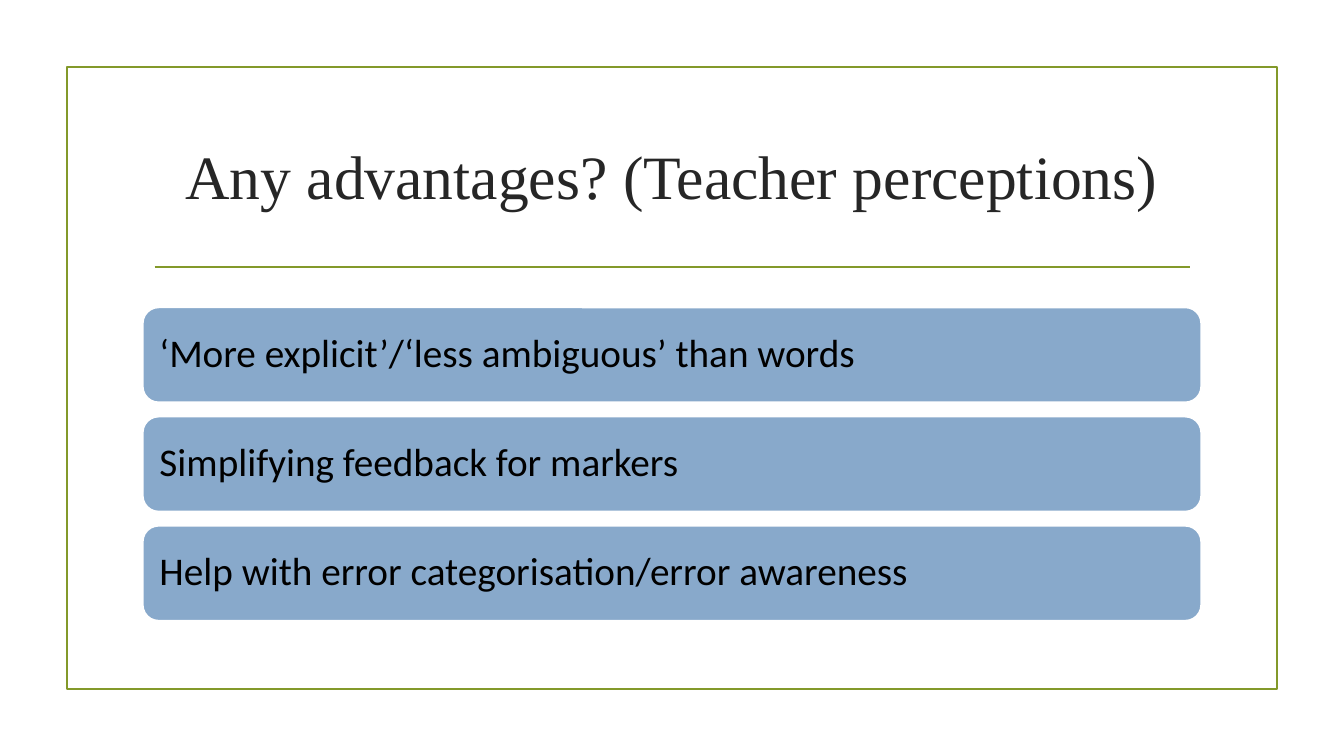
from dataclasses import dataclass

from lxml import etree
from pptx import Presentation
from pptx import util as u
from pptx.dml.color import RGBColor
from pptx.enum import shapes, text
from pptx.oxml.ns import qn

COLUMNS, ROWS = 160, 90


@dataclass(frozen=True)
class Theme:
    background: str = "FFFFFF"
    accent: str = "83992A"
    card: str = "88A9CB"
    title: str = "262626"
    body: str = "000000"
    title_font: str = "Times New Roman"
    body_font: str = "Calibri"
    title_size: int = 44
    body_size: int = 28
    line_width: float = 1.25


class SlideBuilder:
    """Draws on one slide; lengths are columns and rows of the grid."""

    def __init__(self, presentation, theme):
        self.theme = theme
        self.column = presentation.slide_width / COLUMNS
        self.row = presentation.slide_height / ROWS
        self.slide = presentation.slides.add_slide(presentation.slide_layouts[6])
        fill = self.slide.background.fill
        fill.solid()
        fill.fore_color.rgb = RGBColor.from_string(theme.background)

    def place(self, *lengths):
        """Turn alternating columns and rows into slide lengths."""
        steps = (self.column, self.row) * 2
        return [u.Emu(round(length * step)) for length, step in zip(lengths, steps)]

    def outline(self, line, color):
        line.color.rgb = RGBColor.from_string(color)
        line.width = u.Pt(self.theme.line_width)

    def set_words(self, shape, words, font, size, color, align, inset):
        frame = shape.text_frame
        frame.text = words
        frame.word_wrap = True
        frame.vertical_anchor = text.MSO_ANCHOR.MIDDLE
        frame.margin_left = frame.margin_right = u.Inches(inset)
        paragraph = frame.paragraphs[0]
        paragraph.alignment = align
        paragraph.line_spacing = 0.9
        run_font = paragraph.runs[0].font
        run_font.name, run_font.size = font, u.Pt(size)
        run_font.color.rgb = RGBColor.from_string(color)

    def frame(self, *box):
        shape = self.slide.shapes.add_shape(
            shapes.MSO_SHAPE.RECTANGLE, *self.place(*box))
        shape.shadow.inherit = False
        shape.fill.background()
        self.outline(shape.line, self.theme.accent)

    def rule(self, left, right, row):
        line = self.slide.shapes.add_connector(
            shapes.MSO_CONNECTOR.STRAIGHT, *self.place(left, row, right, row))
        self.outline(line.line, self.theme.accent)
        etree.SubElement(line._element.spPr, qn("a:effectLst"))

    def title(self, words, *box):
        shape = self.slide.shapes.add_textbox(*self.place(*box))
        self.set_words(shape, words, self.theme.title_font, self.theme.title_size,
                       self.theme.title, text.PP_ALIGN.CENTER, 0.1)

    def card(self, words, *box):
        shape = self.slide.shapes.add_shape(
            shapes.MSO_SHAPE.ROUNDED_RECTANGLE, *self.place(*box))
        shape.shadow.inherit = False
        shape.fill.solid()
        shape.fill.fore_color.rgb = RGBColor.from_string(self.theme.card)
        self.outline(shape.line, self.theme.background)
        # The rounded corners already inset the text by about 0.05 inch
        self.set_words(shape, words, self.theme.body_font, self.theme.body_size,
                       self.theme.body, text.PP_ALIGN.LEFT, 0.12)


def main():
    presentation = Presentation()
    presentation.slide_width = u.Inches(13.33)
    presentation.slide_height = u.Inches(7.5)
    builder = SlideBuilder(presentation, Theme())

    # Border and heading
    builder.frame(8, 8, 144, 74)
    builder.rule(18.4, 141.7, 31.8)
    left, width = 17, 126
    builder.title("Any advantages? (Teacher perceptions)", left, 12.8, width, 17.2)

    # Advantages, evenly stacked
    advantages = (
        "‘More explicit’/‘less ambiguous’ than words",
        "Simplifying feedback for markers",
        "Help with error categorisation/error awareness",
    )
    first_row, pitch, height = 36.6, 13, 11.3
    for index, advantage in enumerate(advantages):
        builder.card(advantage, left, first_row + index * pitch, width, height)

    presentation.save("out.pptx")


if __name__ == "__main__":
    main()
